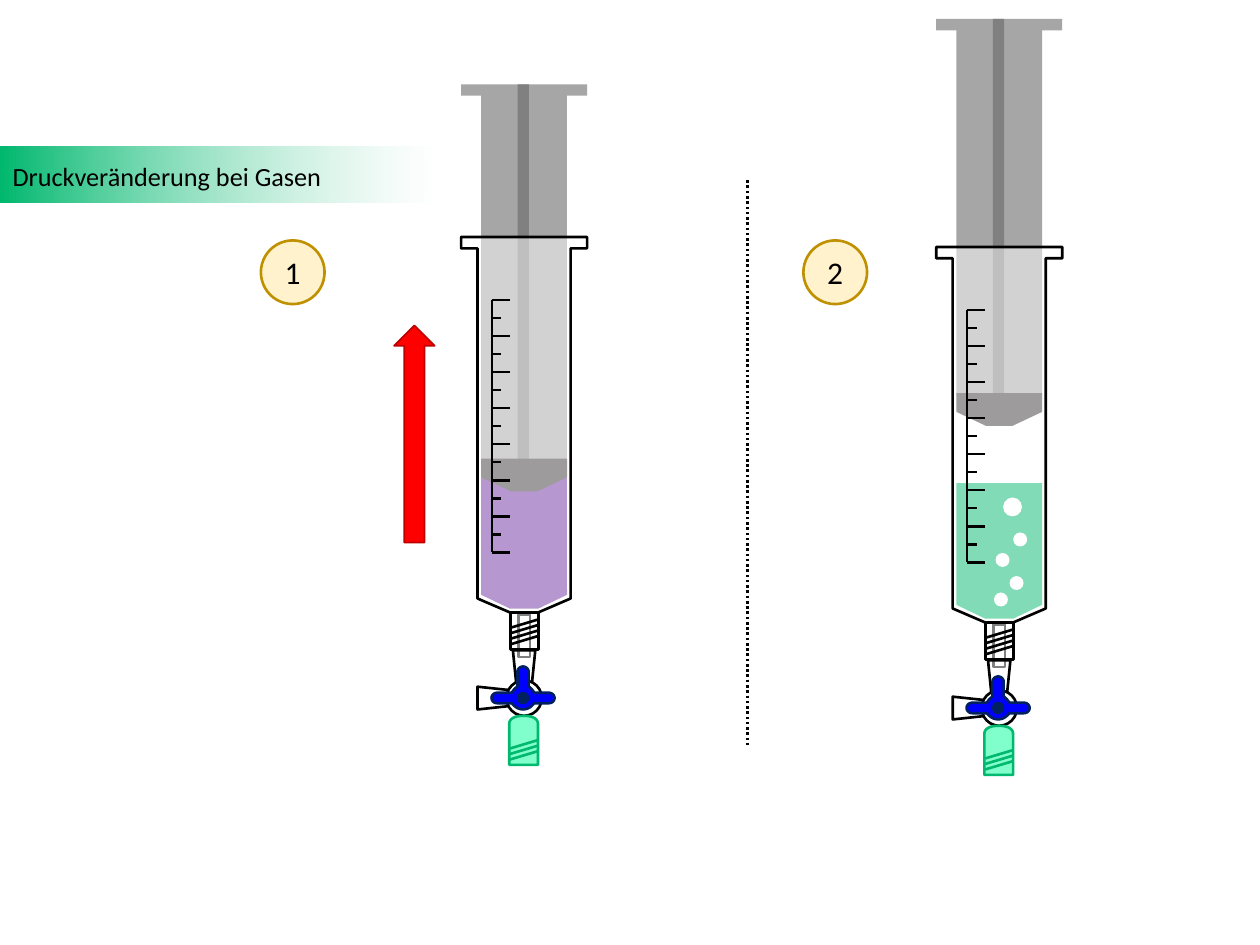
from lxml import etree
from pptx import Presentation
from pptx import util as u
from pptx.dml.color import RGBColor
from pptx.enum import dml, shapes, text
from pptx.oxml.ns import qn

Pt = u.Pt
KIND = shapes.MSO_SHAPE
BLACK, WHITE, GREEN, NAVY = "000000", "FFFFFF", "00B86E", "002060"
GLASS = {"fill": WHITE, "alpha": 50, "line": BLACK}
CAP = {"fill": "80FFCC", "line": GREEN}


def colour(value):
    return RGBColor.from_string(value)


def set_alpha(node, percent):
    etree.SubElement(node, qn("a:alpha"), val=str(percent * 1000))


def paint(shape, fill=None, line=None, alpha=None, weight=1.5):
    shape.shadow.inherit = False
    if fill:
        shape.fill.solid()
        shape.fill.fore_color.rgb = colour(fill)
    else:
        shape.fill.background()
    if alpha:
        set_alpha(shape.element.spPr.find(".//" + qn("a:srgbClr")), alpha)
    if line:
        shape.line.color.rgb = colour(line)
        shape.line.width = Pt(weight)
    else:
        shape.line.fill.background()
    return shape


def add_preset(parent, kind, left, top, width, height, **look):
    shape = parent.shapes.add_shape(kind, Pt(left), Pt(top), Pt(width), Pt(height))
    return paint(shape, **look)


def add_disc(parent, x, y, radius, **look):
    return add_preset(parent, KIND.OVAL, x - radius, y - radius, 2 * radius, 2 * radius, **look)


def add_line(parent, x1, y1, x2, y2, line=BLACK):
    connector = parent.shapes.add_connector(
        shapes.MSO_CONNECTOR.STRAIGHT, Pt(x1), Pt(y1), Pt(x2), Pt(y2))
    connector.line.color.rgb = colour(line)
    connector.line.width = Pt(1.5)
    etree.SubElement(connector.element.spPr, qn("a:effectLst"))
    return connector


def add_outline(parent, x, y, points, **look):
    """Closed outline whose points are measured from (x, y)."""
    spots = [(Pt(x + dx), Pt(y + dy)) for dx, dy in points]
    builder = parent.shapes.build_freeform(*spots[0], scale=1.0)
    builder.add_line_segments(spots[1:], close=True)
    return paint(builder.convert_to_shape(), **look)


def mirror(half):
    """Complete the right half of an outline with its left half."""
    return half + [(-x, y) for x, y in reversed(half)]


def curve(*controls, steps=8):
    """Points along a cubic curve given by four control points."""
    points = []
    for step in range(steps + 1):
        t = step / steps
        weights = ((1 - t) ** 3, 3 * t * (1 - t) ** 2, 3 * t * t * (1 - t), t ** 3)
        points.append(tuple(sum(w * c[axis] for w, c in zip(weights, controls))
                            for axis in (0, 1)))
    return points


def add_threads(parent, x, y, count, line):
    for turn in range(count):
        level = y + turn * 3.15
        add_line(parent, x - 8, level, x + 8, level - 4.8, line)


def add_liquid(page, x, y, fill):
    add_outline(page, x, y, mirror([(24.5, 201.6), (24.5, 204.5), (8, 212.4)]), fill=fill)
    add_preset(page, KIND.RECTANGLE, x - 24.5, y + 135, 49, 67, fill=fill)


def add_plunger(page, x, top):
    plunger = page.shapes.add_group_shape()
    body = [(36, 0), (36, 6.5), (24.5, 6.5), (24.5, 215.3)]
    add_outline(plunger, x, top, mirror(body), fill="A6A6A6")
    add_preset(plunger, KIND.RECTANGLE, x - 3.7, top, 6.5, 222, fill="808080")
    stopper = [(24.5, 213.8), (24.5, 224.6), (7.5, 232.6)]
    add_outline(plunger, x, top, mirror(stopper), fill="3B3838")


def add_barrel(page, x, y):
    barrel = page.shapes.add_group_shape()
    add_preset(barrel, KIND.RECTANGLE, x - 3.2, y + 215.6, 6.5, 24.5, line=BLACK)
    body = [(36, 0), (36, 6.5), (26.6, 6.5), (26.6, 206.6), (8, 214.6)]
    add_outline(barrel, x, y, mirror(body), **GLASS)
    add_preset(barrel, KIND.RECTANGLE, x - 7.7, y + 215, 15.8, 20.9, **GLASS)
    add_threads(barrel, x, y + 223.4, 4, BLACK)
    # Scale: long and short ticks alternate
    spine, first, step, ticks = x - 18.4, y + 36, 10.3, 15
    add_line(barrel, spine, first, spine, first + step * (ticks - 1))
    for tick in range(ticks):
        level = first + step * tick
        add_line(barrel, spine, level, x - (13 if tick % 2 else 8), level)


def add_stopcock(page, x, y):
    cock = page.shapes.add_group_shape()
    side = [(-26.6, 270), (-26.6, 257), (-6, 259.2), (-6, 267.8)]
    add_outline(cock, x, y, side, **GLASS)
    add_outline(cock, x, y, mirror([(6.4, 236.2), (4.3, 257)]), **GLASS)
    add_disc(cock, x, y + 263.5, 10.1, fill=WHITE, line=BLACK)
    # Cap
    dome = curve((0, 273.6), (5.5, 273.6), (8.2, 275.5), (8.2, 278.2))
    add_outline(cock, x - 0.3, y, mirror(dome + [(8.2, 301.7)]), **CAP)
    add_threads(cock, x, y + 292.3, 3, GREEN)
    # Three-armed handle
    handle = (curve((0, 245.5), (1.8, 245.5), (3.2, 247), (3.2, 248.6))
              + [(3.2, 256.8), (5, 258.5), (6.5, 260.5)]
              + curve((14.7, 260.5), (16.5, 260.5), (18, 261.8), (18, 263.5))
              + curve((18, 263.5), (18, 265.2), (16.5, 266.5), (14.7, 266.5))
              + [(6.5, 266.5)]
              + curve((5, 268), (3.6, 269.3), (2, 270), (0, 270)))
    add_outline(cock, x - 0.6, y, mirror(handle), fill="0000FF", line=NAVY)
    add_disc(cock, x - 0.6, y + 263.5, 3.6, fill=NAVY)


def add_syringe(page, x, y, plunger_top, liquid):
    add_liquid(page, x, y, liquid)
    add_plunger(page, x, plunger_top)
    add_barrel(page, x, y)
    add_stopcock(page, x, y)


def write(shape, words, size, align, **frame_format):
    box = shape.text_frame
    for name, value in frame_format.items():
        setattr(box, name, value)
    para = box.paragraphs[0]
    para.alignment = align
    span = para.add_run()
    span.text = words
    for name, value in {"size": Pt(size), "name": "Calibri"}.items():
        setattr(span.font, name, value)
    span.font.color.rgb = colour(BLACK)


def add_title(page, words):
    banner = add_preset(page, KIND.RECTANGLE, 0, 83.5, 247.7, 32)
    banner.fill.gradient()
    banner.fill.gradient_angle = 180
    for stop, value in zip(banner.fill.gradient_stops, (WHITE, GREEN)):
        stop.color.rgb = colour(value)
    set_alpha(banner.element.spPr.find(".//" + qn("a:srgbClr")), 42)
    title = page.shapes.title
    frame = {"left": 0, "top": 87.8, "width": 193, "height": 25.2}
    for name, value in frame.items():
        setattr(title, name, Pt(value))
    write(title, words, 15, text.PP_ALIGN.LEFT, word_wrap=False,
          vertical_anchor=text.MSO_ANCHOR.TOP, auto_size=text.MSO_AUTO_SIZE.SHAPE_TO_FIT_TEXT)
    banner.element.addnext(title.element)


def add_badge(page, x, number):
    badge = add_disc(page, x, 155.6, 18.2, fill="FFF2CC", line="BF9000")
    write(badge, number, 18, text.PP_ALIGN.CENTER, vertical_anchor=text.MSO_ANCHOR.MIDDLE)


def main():
    deck = Presentation()
    deck.slide_width, deck.slide_height = Pt(720), Pt(540)
    page = deck.slides.add_slide(deck.slide_layouts[5])
    add_title(page, "Druckveränderung bei Gasen")

    # Syringes on both sides of the divider
    add_syringe(page, 571, 141.1, 10.8, GREEN)
    divider = add_line(page, 427, 103, 427, 426)
    divider.line.dash_style = dml.MSO_LINE.ROUND_DOT
    add_syringe(page, 299.5, 135.4, 48.2, "7030A0")

    # Gas bubbles
    for x, y, radius in ((572, 342.6, 4), (580.9, 333.2, 4), (572.9, 320, 4),
                         (583, 308.3, 4), (578.6, 289.7, 5.4)):
        add_disc(page, x, y, radius, fill=WHITE)

    # Pulling direction and step numbers
    add_preset(page, KIND.UP_ARROW, 225.2, 186, 23.2, 124, fill="FF0000", line="C00000", weight=1)
    add_badge(page, 167.3, "1")
    add_badge(page, 477.3, "2")
    deck.save("out.pptx")


if __name__ == "__main__":
    main()
